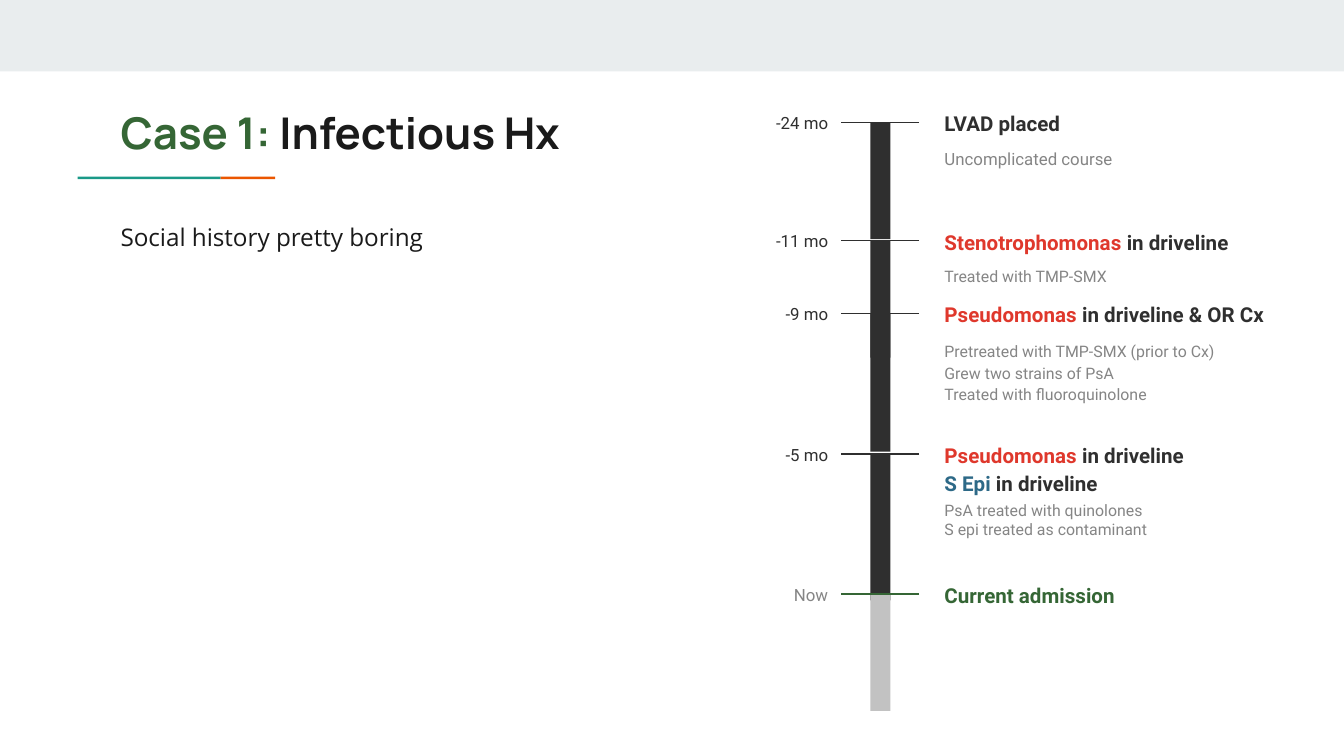
from lxml import etree
from pptx import Presentation
from pptx.dml.color import RGBColor
from pptx.enum import shapes, text
from pptx.oxml.ns import qn
from pptx.util import Cm, Pt

INK = RGBColor(0x1A, 0x1A, 0x1A)
DARK = RGBColor(0x2F, 0x2F, 0x2F)
GREY = RGBColor(0x85, 0x85, 0x85)
LIGHT = RGBColor(0xC2, 0xC2, 0xC2)
BAND = RGBColor(0xE9, 0xED, 0xEE)
GREEN = RGBColor(0x35, 0x66, 0x35)
RED = RGBColor(0xDF, 0x38, 0x2C)
BLUE = RGBColor(0x2D, 0x69, 0x87)
TEAL = RGBColor(0x1A, 0x99, 0x88)
ORANGE = RGBColor(0xEB, 0x56, 0x00)

TITLE = [[("Case 1:", GREEN), (" Infectious Hx", INK)]]
BODY = [[("Social history pretty boring", INK)]]

DETAIL = dict(size=8.5, spacing=1.15, dy=0.23)
EVENTS = [
    dict(y=2.31, bar=2.21, time="-24 mo",
         heading=[[("LVAD placed", DARK)]],
         details=["Uncomplicated course"], detail=DETAIL | dict(size=9)),
    dict(y=4.55, bar=2.21, time="-11 mo",
         heading=[[("Stenotrophomonas ", RED), ("in driveline", DARK)]],
         details=["Treated with TMP-SMX"], detail=DETAIL),
    dict(y=5.92, bar=2.62, time="-9 mo",
         heading=[[("Pseudomonas ", RED), ("in driveline & OR Cx", DARK)]],
         details=["Pretreated with TMP-SMX (prior to Cx)",
                  "Grew two strains of PsA",
                  "Treated with fluoroquinolone"], detail=DETAIL),
    dict(y=8.58, bar=2.77, time="-5 mo",
         heading=[[("Pseudomonas ", RED), ("in driveline", DARK)],
                  [("S Epi", BLUE), (" in driveline", DARK)]],
         details=["PsA treated with quinolones",
                  "S epi treated as contaminant"],
         detail=DETAIL | dict(spacing=1.0, dy=0.64)),
    dict(y=11.23, bar=2.21, time="Now",
         heading=[[("Current admission", GREEN)]], details=[],
         bar_color=LIGHT, tick_color=GREEN, time_color=GREY),
]

BAR_X, BAR_W = 16.45, 0.38
TICK_LEFT, TICK_RIGHT = 15.9, 17.37
TIME_X, TIME_W = 13.79, 2.11
TEXT_X, TEXT_W = 17.6, 7.57


def add_bar(s, x, y, w, h, color):
    sp = s.shapes.add_shape(shapes.MSO_SHAPE.RECTANGLE, Cm(x), Cm(y), Cm(w), Cm(h))
    sp.shadow.inherit = False
    sp.fill.solid()
    sp.fill.fore_color.rgb = color
    sp.line.fill.background()


def add_tick(s, y, color):
    line = s.shapes.add_connector(shapes.MSO_CONNECTOR.STRAIGHT,
                                  Cm(TICK_RIGHT), Cm(y), Cm(TICK_LEFT), Cm(y))
    line.line.color.rgb = color
    line.line.width = Pt(0.75)
    etree.SubElement(line._element.spPr, qn("a:effectLst"))


def add_text(s, x, y, w, h, paragraphs, size, font="Roboto", bold=False,
             spacing=1.15, align=text.PP_ALIGN.LEFT, after=0):
    """Add a text box; each paragraph is a list of (wording, colour) runs."""
    tf = s.shapes.add_textbox(Cm(x), Cm(y), Cm(w), Cm(h)).text_frame
    tf.word_wrap = True
    for side in ("left", "top", "right", "bottom"):
        setattr(tf, f"margin_{side}", Cm(0.25))
    for i, runs in enumerate(paragraphs):
        p = tf.add_paragraph() if i else tf.paragraphs[0]
        for name, value in dict(alignment=align, line_spacing=spacing,
                                space_after=Pt(after)).items():
            setattr(p, name, value)
        for words, color in runs:
            r = p.add_run()
            r.text = words
            for name, value in dict(name=font, size=Pt(size), bold=bold).items():
                setattr(r.font, name, value)
            r.font.color.rgb = color


def add_event(s, e):
    y = e["y"]
    add_bar(s, BAR_X, y, BAR_W, e["bar"], e.get("bar_color", DARK))
    add_tick(s, y, e.get("tick_color", DARK))
    add_text(s, TEXT_X, y - 0.53, TEXT_W, 0.76, e["heading"], 11, bold=True)
    if e["details"]:
        d = e["detail"]
        add_text(s, TEXT_X, y + d["dy"], TEXT_W, 1.14,
                 [[(line, GREY)] for line in e["details"]],
                 d["size"], spacing=d["spacing"])
    add_text(s, TIME_X, y - 0.46, TIME_W, 0.97,
             [[(e["time"], e.get("time_color", DARK))]], 9,
             align=text.PP_ALIGN.RIGHT)


def main():
    prs = Presentation()
    prs.slide_width, prs.slide_height = Cm(25.4), Cm(14.29)
    s = prs.slides.add_slide(prs.slide_layouts[6])
    add_bar(s, 0, 0, 25.4, 1.35, BAND)
    add_bar(s, 1.47, 3.34, 2.7, 0.05, TEAL)
    add_bar(s, 4.17, 3.34, 1.03, 0.05, ORANGE)
    add_text(s, 2.03, 1.75, 10.46, 1.5, TITLE, 23.4, "Manrope", bold=True, spacing=1.0)
    add_text(s, 2.03, 3.86, 7.72, 6.27, BODY, 13, "Open Sans", after=12)
    for e in EVENTS:
        add_event(s, e)
    prs.save("out.pptx")


if __name__ == "__main__":
    main()
